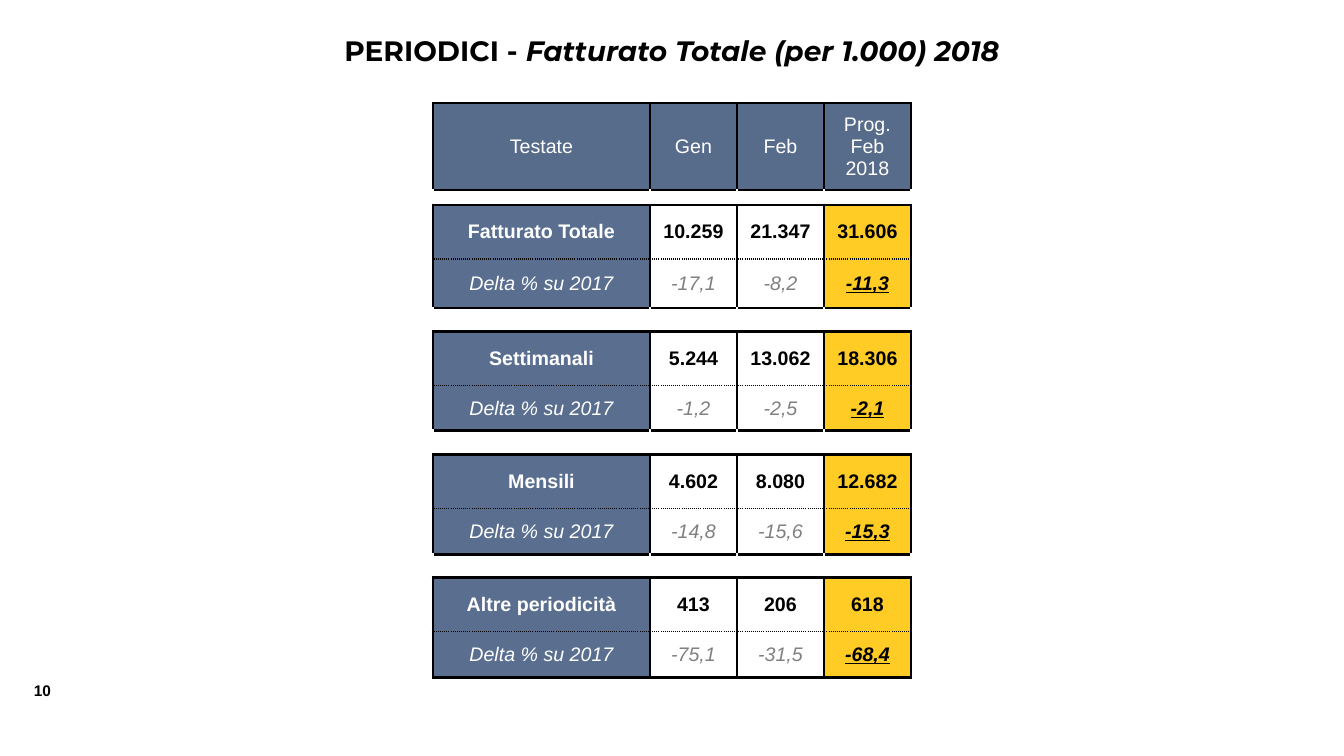
"""Build the slide with the 2018 total turnover table for periodicals."""
from lxml import etree
from pptx import Presentation
from pptx.dml.color import RGBColor
from pptx.enum.text import MSO_ANCHOR, PP_ALIGN
from pptx.oxml.ns import qn
from pptx.util import Pt

SLIDE = (1344, 756)
EMU_PER_PX = 12192000 / SLIDE[0]

TITLE = [("PERIODICI - ", False), ("Fatturato Totale (per 1.000) 2018", True)]
TITLE_BOX = (168, 29, 1008, 44)
PAGE_NUMBER = "10"
PAGE_NUMBER_BOX = (24, 676, 42, 29)

HEADINGS = ["Testate", "Gen", "Feb", "Prog.\nFeb\n2018"]
DELTA = "Delta % su 2017"
GROUPS = [
    ("Fatturato Totale", ["10.259", "21.347", "31.606"], ["-17,1", "-8,2", "-11,3"]),
    ("Settimanali", ["5.244", "13.062", "18.306"], ["-1,2", "-2,5", "-2,1"]),
    ("Mensili", ["4.602", "8.080", "12.682"], ["-14,8", "-15,6", "-15,3"]),
    ("Altre periodicità", ["413", "206", "618"], ["-75,1", "-31,5", "-68,4"]),
]
TABLE_AT = (433, 103)
COLUMNS = [217, 87, 87, 87]
HEADING_HEIGHT = 87
GROUP_HEIGHTS = [(15, 54, 49), (24, 54, 45), (24, 54, 46), (23, 54, 46)]

BLACK, WHITE, GREY = "000000", "FFFFFF", "808080"
HEADING_BLUE, LABEL_BLUE, YELLOW = "576B8A", "5A6F90", "FFCB25"
SOLID, DOTTED, BLANK = (BLACK, 2.25, "solid"), (BLACK, 1, "sysDot"), (WHITE, 2.25, "solid")


def px(length):
    return round(length * EMU_PER_PX)


def color(value):
    return RGBColor.from_string(value)


def add_run(paragraph, text, size, ink, font="Arial", bold=False, italic=False, underline=False):
    run = paragraph.add_run()
    run.text = text
    run.font.name, run.font.size = font, Pt(size)
    run.font.bold, run.font.italic, run.font.underline = bold, italic, underline
    run.font.color.rgb = color(ink)


def add_text_box(slide, box, wrap):
    frame = slide.shapes.add_textbox(*map(px, box)).text_frame
    frame.word_wrap = wrap
    return frame.paragraphs[0]


def style_cell(cell, fill, left, right, top, bottom, margins=(0, 0)):
    cell.fill.solid()
    cell.fill.fore_color.rgb = color(fill)
    cell.vertical_anchor = MSO_ANCHOR.MIDDLE
    cell.margin_left = cell.margin_right = px(margins[0])
    cell.margin_top = cell.margin_bottom = px(margins[1])
    borders = []
    for tag, border in zip(("a:lnL", "a:lnR", "a:lnT", "a:lnB"), (left, right, top, bottom)):
        if border:
            ink, width, dash = border
            line = etree.Element(qn(tag), w=str(Pt(width)))
            solid = etree.SubElement(line, qn("a:solidFill"))
            etree.SubElement(solid, qn("a:srgbClr"), val=ink)
            etree.SubElement(line, qn("a:prstDash"), val=dash)
            borders.append(line)
    properties = cell._tc.get_or_add_tcPr()
    for position, line in enumerate(borders):
        properties.insert(position, line)


def write_cell(cell, text, ink, **emphasis):
    paragraph = cell.text_frame.paragraphs[0]
    paragraph.alignment = PP_ALIGN.CENTER
    for number, line in enumerate(text.split("\n")):
        if number:
            paragraph.add_line_break()
        add_run(paragraph, line, 14, ink, **emphasis)


def fill_headings(table):
    for column, heading in enumerate(HEADINGS):
        cell = table.cell(0, column)
        style_cell(cell, HEADING_BLUE, SOLID, SOLID, SOLID, SOLID, (10, 5))
        write_cell(cell, heading, WHITE)


def fill_gap(table, row, side):
    for column in range(len(COLUMNS)):
        cell = table.cell(row, column)
        style_cell(cell, WHITE, side, side, SOLID, SOLID)
        etree.SubElement(cell.text_frame.paragraphs[0]._p, qn("a:endParaRPr"), sz="400")


def fill_values(table, row, label, values, is_delta):
    top, bottom = (DOTTED, SOLID) if is_delta else (SOLID, DOTTED)
    last = len(values)
    for column, text in enumerate([label, *values]):
        cell = table.cell(row, column)
        fill = {0: LABEL_BLUE, last: YELLOW}.get(column, WHITE)
        margins = (10, 5) if column == 0 else (0, 0)
        style_cell(cell, fill, SOLID, SOLID, top, bottom, margins)
        is_total = column == last
        ink = WHITE if column == 0 else GREY if is_delta and not is_total else BLACK
        write_cell(cell, text, ink, bold=is_total or not is_delta,
                   italic=is_delta, underline=is_delta and is_total)


def add_turnover_table(slide):
    heights = [HEADING_HEIGHT, *(height for group in GROUP_HEIGHTS for height in group)]
    size = (sum(COLUMNS), sum(heights))
    table = slide.shapes.add_table(len(heights), len(COLUMNS), *map(px, TABLE_AT + size)).table
    table.first_row = table.horz_banding = False
    for column, width in zip(table.columns, COLUMNS):
        column.width = px(width)
    for row, height in zip(table.rows, heights):
        row.height = px(height)
    fill_headings(table)
    for number, (label, amounts, deltas) in enumerate(GROUPS):
        first = 1 + 3 * number
        fill_gap(table, first, BLANK if number else None)
        fill_values(table, first + 1, label, amounts, False)
        fill_values(table, first + 2, DELTA, deltas, True)


def main():
    deck = Presentation()
    deck.slide_width, deck.slide_height = map(px, SLIDE)
    slide = deck.slides.add_slide(deck.slide_layouts[6])
    add_run(add_text_box(slide, PAGE_NUMBER_BOX, False), PAGE_NUMBER, 11, BLACK, bold=True)
    title = add_text_box(slide, TITLE_BOX, True)
    title.alignment = PP_ALIGN.CENTER
    for text, italic in TITLE:
        add_run(title, text, 20, BLACK, "Montserrat", bold=True, italic=italic)
    add_turnover_table(slide)
    deck.save("out.pptx")


if __name__ == "__main__":
    main()
